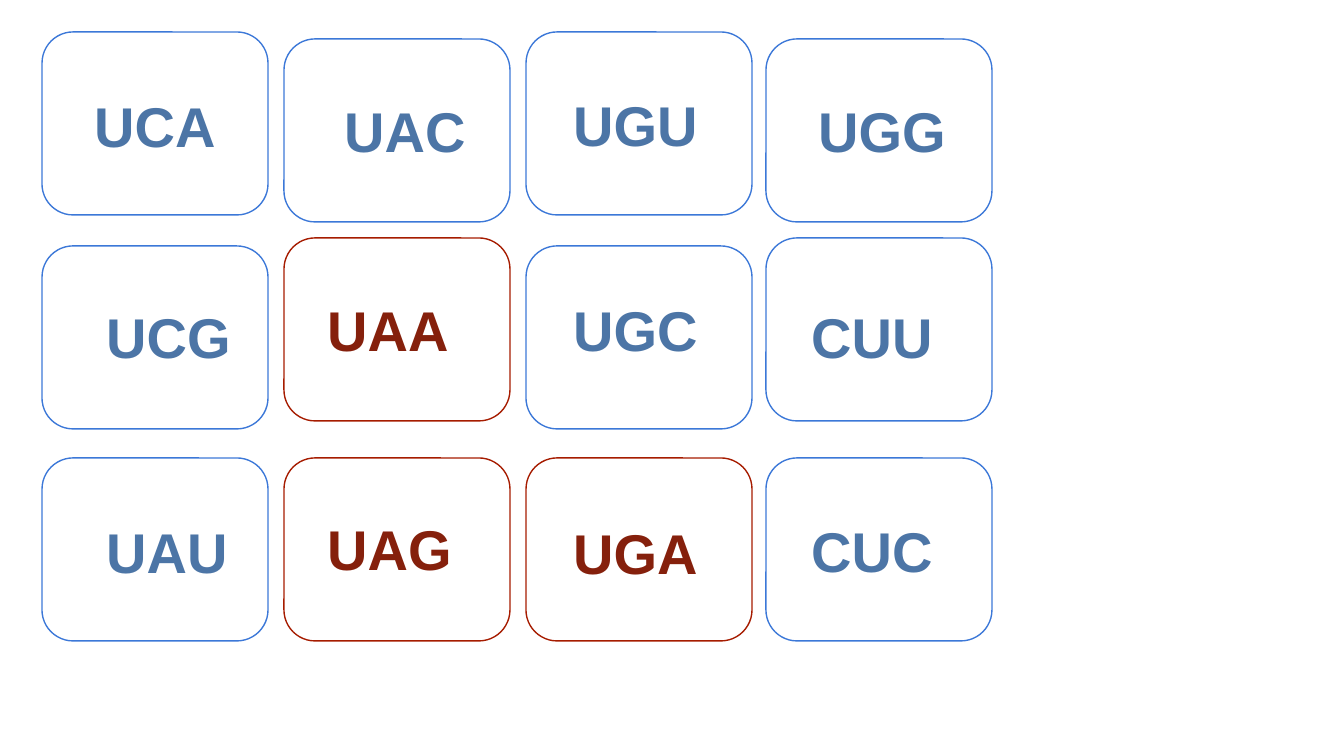
import pptx
import pptx.dml.color
import pptx.enum.shapes
import pptx.enum.text
import pptx.util

PX = 914400 / 134.4
WHITE = pptx.dml.color.RGBColor(0xFF, 0xFF, 0xFF)
CODON_LINE = pptx.dml.color.RGBColor(0x3C, 0x78, 0xD8)
CODON_TEXT = pptx.dml.color.RGBColor(0x4C, 0x75, 0xA6)
STOP_LINE = pptx.dml.color.RGBColor(0xA6, 0x1C, 0x00)
STOP_TEXT = pptx.dml.color.RGBColor(0x85, 0x20, 0x0C)
STOP_CODONS = {"UAA", "UAG", "UGA"}
CARD_WIDTH, CARD_HEIGHT = 226, 183
LABEL_HEIGHT = 95


def px(*lengths):
    return [pptx.util.Emu(round(length * PX)) for length in lengths]


deck = pptx.Presentation()
deck.slide_width, deck.slide_height = px(1344, 756)
slide = deck.slides.add_slide(deck.slide_layouts[6])

outer_tops = (32, 246, 458)
inner_tops = (39, 238, 458)
columns = [
    (42, outer_tops, [("UCA", 81, 78, 160), ("UCG", 93, 289, 160), ("UAU", 93, 504, 160)]),
    (284, inner_tops, [("UAC", 331, 83, 441), ("UAA", 314, 282, 441), ("UAG", 314, 501, 195)]),
    (526, outer_tops, [("UGU", 560, 77, 441), ("UGC", 560, 282, 441), ("UGA", 560, 505, 441)]),
    (766, inner_tops, [("UGG", 805, 83, 441), ("CUU", 798, 289, 441), ("CUC", 798, 503, 441)]),
]

for card_left, card_tops, codons in columns:
    for card_top, (codon, label_left, label_top, label_width) in zip(card_tops, codons):
        is_stop = codon in STOP_CODONS

        card = slide.shapes.add_shape(
            pptx.enum.shapes.MSO_SHAPE.ROUNDED_RECTANGLE,
            *px(card_left, card_top, CARD_WIDTH, CARD_HEIGHT),
        )
        card.adjustments[0] = 0.17
        card.shadow.inherit = False
        card.fill.solid()
        card.fill.fore_color.rgb = WHITE
        card.line.color.rgb = STOP_LINE if is_stop else CODON_LINE
        card.line.width = pptx.util.Pt(0.75)

        label = slide.shapes.add_textbox(*px(label_left, label_top, label_width, LABEL_HEIGHT))
        frame = label.text_frame
        frame.word_wrap = True
        frame.auto_size = pptx.enum.text.MSO_AUTO_SIZE.SHAPE_TO_FIT_TEXT
        frame.margin_left = frame.margin_right = pptx.util.Inches(0.1)
        frame.margin_top = frame.margin_bottom = pptx.util.Inches(0.1)
        frame.text = codon
        font = frame.paragraphs[0].runs[0].font
        font.name = "Arial"
        font.size = pptx.util.Pt(30)
        font.bold = True
        font.color.rgb = STOP_TEXT if is_stop else CODON_TEXT

deck.save("out.pptx")
